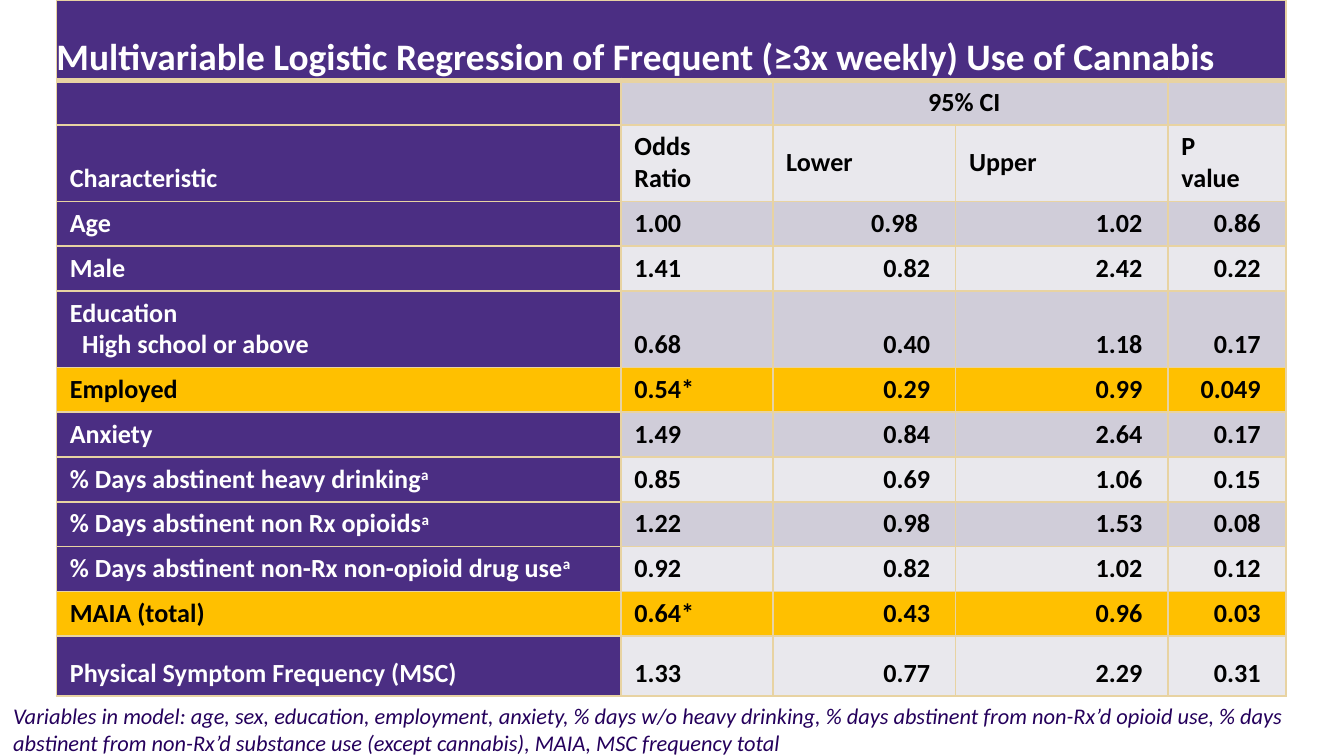
from lxml.etree import SubElement
from pptx import Presentation
from pptx.dml.color import RGBColor
from pptx.enum.text import MSO_ANCHOR, PP_ALIGN
from pptx.oxml.ns import qn
from pptx.util import Inches, Pt

# Slide and columns in inches, row heights in points
WIDTH = 10
HEIGHT = WIDTH * 9 / 16
COLUMNS = [4.2, 1.13, 1.36, 1.58, 0.88]
LINE, DOUBLE = 24, 41
ROWS = [43, LINE, DOUBLE, LINE, LINE, DOUBLE] + [LINE] * 6 + [32]

PURPLE, GOLD, TAN = "4B2E83", "FFC000", "E8D3A2"
WHITE, BLACK, INK = "FFFFFF", "000000", "25005C"
STRIPES = ["E9E8ED", "D0CDD9"]
PAD, WIDE_PAD = 0.19, 0.28

TITLE = "Multivariable Logistic Regression of Frequent (≥3x weekly) Use of Cannabis"
HEADINGS = ["Characteristic", "Odds Ratio", "Lower", "Upper", "P value"]
# A "^" marks the start of a superscript
RESULTS = [
    ["Age", "1.00", "0.98", "1.02", "0.86"],
    ["Male", "1.41", "0.82", "2.42", "0.22"],
    ["Education\nHigh school or above", "0.68", "0.40", "1.18", "0.17"],
    ["Employed", "0.54*", "0.29", "0.99", "0.049"],
    ["Anxiety", "1.49", "0.84", "2.64", "0.17"],
    ["% Days abstinent heavy drinking^a", "0.85", "0.69", "1.06", "0.15"],
    ["% Days abstinent non Rx opioids^a", "1.22", "0.98", "1.53", "0.08"],
    ["% Days abstinent non-Rx non-opioid drug use^a", "0.92", "0.82", "1.02", "0.12"],
    ["MAIA (total)", "0.64*", "0.43", "0.96", "0.03"],
    ["Physical Symptom Frequency (MSC)", "1.33", "0.77", "2.29", "0.31"],
]
FOOTNOTE = (
    "Variables in model: age, sex, education, employment, anxiety, "
    "% days w/o heavy drinking, % days abstinent from non-Rx’d opioid use, "
    "% days abstinent from non-Rx’d substance use (except cannabis), "
    "MAIA, MSC frequency total"
)


def color(code):
    return RGBColor.from_string(code)


def apply(target, values):
    for name, value in values.items():
        setattr(target, name, value)


def write(paragraph, text, ink, **style):
    """Write one paragraph, raising whatever follows a caret."""
    for index, part in enumerate(text.split("^")):
        run = paragraph.add_run()
        run.text = part
        apply(run.font, {"name": "Calibri", "size": Pt(14), **style})
        run.font.color.rgb = color(ink)
        if index:
            run.font._element.set("baseline", "30000")


def set_borders(cell, **heavy):
    properties = cell._tc.get_or_add_tcPr()
    for side in "LRTB":
        line = SubElement(properties, qn(f"a:ln{side}"), w=str(Pt(heavy.get(side, 1))))
        fill = SubElement(line, qn("a:solidFill"))
        SubElement(fill, qn("a:srgbClr"), val=TAN)


def fill_cell(cell, text, back, ink, align=PP_ALIGN.LEFT, size=14, **layout):
    cell.fill.solid()
    cell.fill.fore_color.rgb = color(back)
    apply(cell, {"vertical_anchor": MSO_ANCHOR.BOTTOM, "margin_top": Inches(0.04),
                 "margin_right": Inches(PAD), **layout})
    if not text:
        apply(cell, {"margin_top": 0, "margin_bottom": 0})
        return
    frame = cell.text_frame
    for index, line in enumerate(text.split("\n")):
        paragraph = frame.add_paragraph() if index else frame.paragraphs[0]
        paragraph.alignment = align
        write(paragraph, line, ink, bold=True, size=Pt(size))
        if index:
            # Subordinate lines are indented
            paragraph._p.get_or_add_pPr().set("marL", str(Inches(0.09)))


def add_title(table):
    title = table.cell(0, 0)
    title.merge(table.cell(0, len(COLUMNS) - 1))
    no_margins = {f"margin_{side}": 0 for side in ("left", "top", "right", "bottom")}
    fill_cell(title, TITLE, PURPLE, WHITE, size=20, **no_margins)
    title.text_frame.paragraphs[0].line_spacing = 1.07


def add_headings(table):
    # Spanning heading above the interval limits
    table.cell(1, 2).merge(table.cell(1, 3))
    for column, text in enumerate(["", "", "95% CI", "", ""]):
        back = STRIPES[1] if column else PURPLE
        fill_cell(table.cell(1, column), text, back, BLACK, PP_ALIGN.CENTER)

    # Column headings
    for column, text in enumerate(HEADINGS):
        if column:
            fill_cell(table.cell(2, column), text, STRIPES[0], BLACK,
                      vertical_anchor=MSO_ANCHOR.MIDDLE, margin_right=Inches(WIDE_PAD))
        else:
            fill_cell(table.cell(2, column), text, PURPLE, WHITE)


def add_results(table):
    for row, result in enumerate(RESULTS, start=3):
        significant = result[1].endswith("*")
        for column, text in enumerate(result):
            back = STRIPES[row % 2] if column else PURPLE
            ink = BLACK if column else WHITE
            if significant:
                back, ink = GOLD, BLACK
            align = PP_ALIGN.RIGHT if column > 1 else PP_ALIGN.LEFT
            fill_cell(table.cell(row, column), text, back, ink, align)
    table.cell(3, 2).margin_right = Inches(WIDE_PAD)


def add_regression_table(slide):
    table = slide.shapes.add_table(
        len(ROWS), len(COLUMNS), Inches(0.42), 0,
        Inches(sum(COLUMNS)), Pt(sum(ROWS))).table
    apply(table, {"first_row": False, "horz_banding": False})
    for column, width in zip(table.columns, COLUMNS):
        column.width = Inches(width)
    for row, height in zip(table.rows, ROWS):
        row.height = Pt(height)

    # A heavy rule separates the title from the rest
    heavy_rules = {0: {"B": 3}, 1: {"T": 3}}
    for row in range(len(ROWS)):
        for column in range(len(COLUMNS)):
            set_borders(table.cell(row, column), **heavy_rules.get(row, {}))

    add_title(table)
    add_headings(table)
    add_results(table)


def add_footnote(slide):
    footnote = slide.shapes.add_textbox(
        0, Inches(HEIGHT * 0.92), Inches(WIDTH), Inches(HEIGHT * 0.09))
    footnote.text_frame.word_wrap = True
    write(footnote.text_frame.paragraphs[0], FOOTNOTE, INK, size=Pt(12), italic=True)


def main():
    deck = Presentation()
    apply(deck, {"slide_width": Inches(WIDTH), "slide_height": Inches(HEIGHT)})
    slide = deck.slides.add_slide(deck.slide_layouts[6])
    add_regression_table(slide)
    add_footnote(slide)
    deck.save("out.pptx")


if __name__ == "__main__":
    main()
